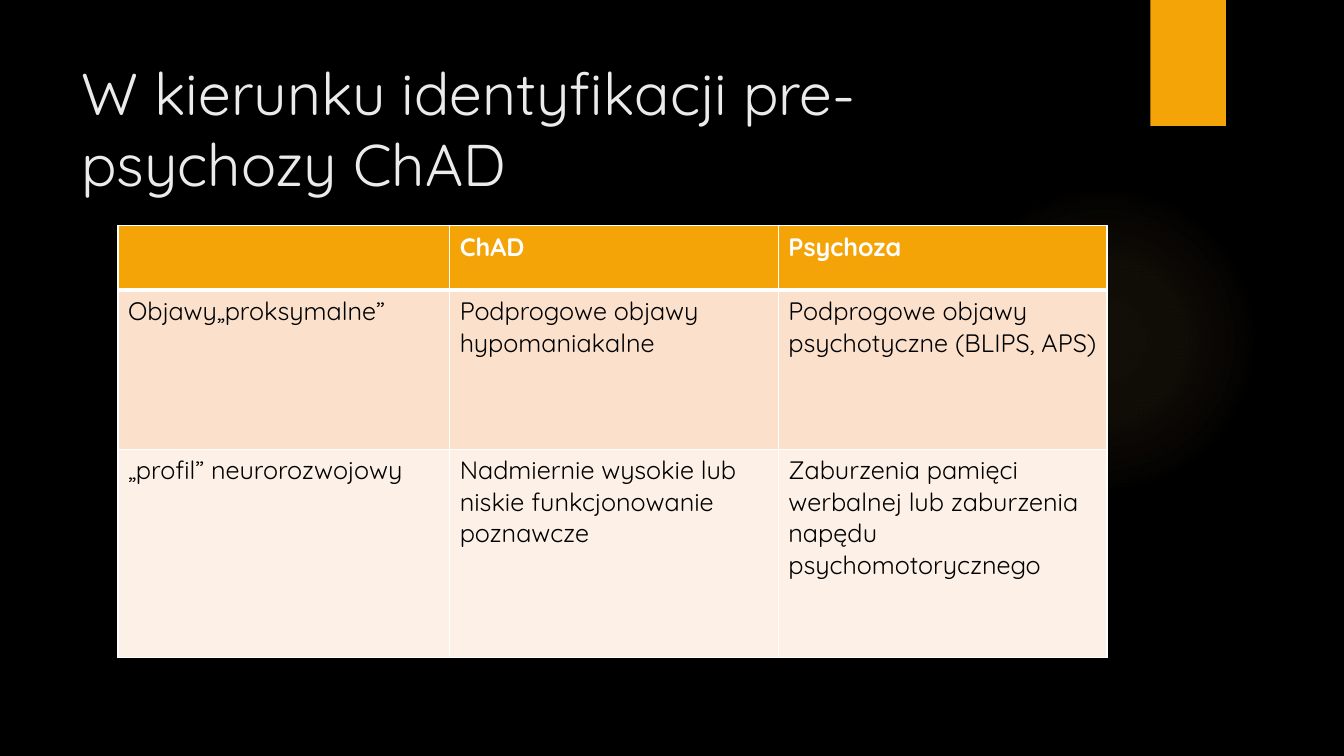
"""Build the slide comparing early signs of ChAD and psychosis."""
from dataclasses import dataclass

from lxml import etree
from pptx import Presentation
from pptx.dml.color import RGBColor
from pptx.enum.shapes import MSO_SHAPE
from pptx.enum.text import MSO_ANCHOR
from pptx.oxml import parse_xml
from pptx.oxml.ns import nsdecls, qn
from pptx.slide import Slide
from pptx.table import _Cell
from pptx.text.text import TextFrame
from pptx.util import Inches, Pt

OVAL = MSO_SHAPE.OVAL
RECT = MSO_SHAPE.RECTANGLE
MIDDLE = MSO_ANCHOR.MIDDLE


@dataclass(frozen=True)
class Theme:
    font: str = "Quicksand"
    back: str = "000000"
    title: str = "EBEBEB"
    accent: str = "F5A408"
    glow: str = "FAC96A"
    rule: str = "FFFFFF"
    title_size: int = 42
    cell_size: int = 18
    thin: int = 1
    thick: int = 3


@dataclass(frozen=True)
class Box:
    left: float
    top: float
    width: float
    height: float

    def place(self) -> tuple[int, ...]:
        return tuple(Inches(n) for n in (self.left, self.top, self.width, self.height))


@dataclass(frozen=True)
class Row:
    height: float
    fill: str
    ink: str
    bold: bool
    texts: tuple[str, ...]


THEME = Theme()
GLOW = Box(9.41, 1.83, 3.08, 3.08)
TAB = Box(11.41, 0, 0.75, 1.25)
TITLE = Box(0.71, 0.5, 10.29, 1.53)
GRID = Box(1.17, 2.24, 9.81, 4.28)
WIDTHS = (3.29, 3.26, 3.26)
STOPS = ((0, 7), (36, 6), (69, 0))
ROWS = (
    Row(0.64, THEME.accent, "FFFFFF", True, ("", "ChAD", "Psychoza")),
    Row(1.58, "FBE0CC", "000000", False, (
        "Objawy„proksymalne”",
        "Podprogowe objawy hypomaniakalne",
        "Podprogowe objawy psychotyczne (BLIPS, APS)",
    )),
    Row(2.06, "FDF0E7", "000000", False, (
        "„profil” neurorozwojowy",
        "Nadmiernie wysokie lub niskie funkcjonowanie poznawcze",
        "Zaburzenia pamięci werbalnej lub zaburzenia napędu psychomotorycznego",
    )),
)


def write(frame: TextFrame, text: str, size: int, ink: str, bold: bool = False) -> None:
    run = frame.paragraphs[0].add_run()
    run.text = text
    run.font.name = THEME.font
    run.font.size = Pt(size)
    run.font.bold = bold
    run.font.color.rgb = RGBColor.from_string(ink)


def add_shape(slide: Slide, kind: MSO_SHAPE, box: Box, fill: str):
    shape = slide.shapes.add_shape(kind, *box.place())
    shape.shadow.inherit = False
    shape.line.fill.background()
    shape.fill.solid()
    shape.fill.fore_color.rgb = RGBColor.from_string(fill)
    return shape


def add_glow(slide: Slide) -> None:
    shape = add_shape(slide, OVAL, GLOW, THEME.glow)
    stops = "".join(
        f'<a:gs pos="{spot * 1000}"><a:srgbClr val="{THEME.glow}">'
        f'<a:alpha val="{alpha * 1000}"/></a:srgbClr></a:gs>'
        for spot, alpha in STOPS
    )
    grade = parse_xml(
        f'<a:gradFill {nsdecls("a")}><a:gsLst>{stops}</a:gsLst><a:path path="circle">'
        '<a:fillToRect l="50000" t="50000" r="50000" b="50000"/></a:path></a:gradFill>'
    )
    props = shape._element.spPr
    props.replace(props.find(qn("a:solidFill")), grade)


def add_title(slide: Slide) -> None:
    frame = slide.shapes.add_textbox(*TITLE.place()).text_frame
    frame.word_wrap = True
    frame.vertical_anchor = MIDDLE
    write(frame, "W kierunku identyfikacji pre-psychozy ChAD", THEME.title_size, THEME.title)


def add_rules(cell: _Cell, top: int, base: int) -> None:
    props = cell._tc.get_or_add_tcPr()
    sides = (("L", THEME.thin), ("R", THEME.thin), ("T", top), ("B", base))
    for spot, (side, width) in enumerate(sides):
        line = etree.Element(qn(f"a:ln{side}"), w=str(Pt(width)))
        fill = etree.SubElement(line, qn("a:solidFill"))
        etree.SubElement(fill, qn("a:srgbClr"), val=THEME.rule)
        props.insert(spot, line)


def add_grid(slide: Slide) -> None:
    table = slide.shapes.add_table(len(ROWS), len(WIDTHS), *GRID.place()).table
    for col, width in zip(table.columns, WIDTHS):
        col.width = Inches(width)
    for i, row in enumerate(ROWS):
        table.rows[i].height = Inches(row.height)
        top = THEME.thick if i == 1 else THEME.thin
        base = THEME.thick if i == 0 else THEME.thin
        for j, text in enumerate(row.texts):
            cell = table.cell(i, j)
            cell.fill.solid()
            cell.fill.fore_color.rgb = RGBColor.from_string(row.fill)
            add_rules(cell, top, base)
            if text:
                write(cell.text_frame, text, THEME.cell_size, row.ink, row.bold)


def main() -> None:
    deck = Presentation()
    deck.slide_width, deck.slide_height = Inches(13.33), Inches(7.5)
    slide = deck.slides.add_slide(deck.slide_layouts[6])
    slide.background.fill.solid()
    slide.background.fill.fore_color.rgb = RGBColor.from_string(THEME.back)
    add_glow(slide)
    add_shape(slide, RECT, TAB, THEME.accent)
    add_title(slide)
    add_grid(slide)
    deck.save("out.pptx")


if __name__ == "__main__":
    main()
